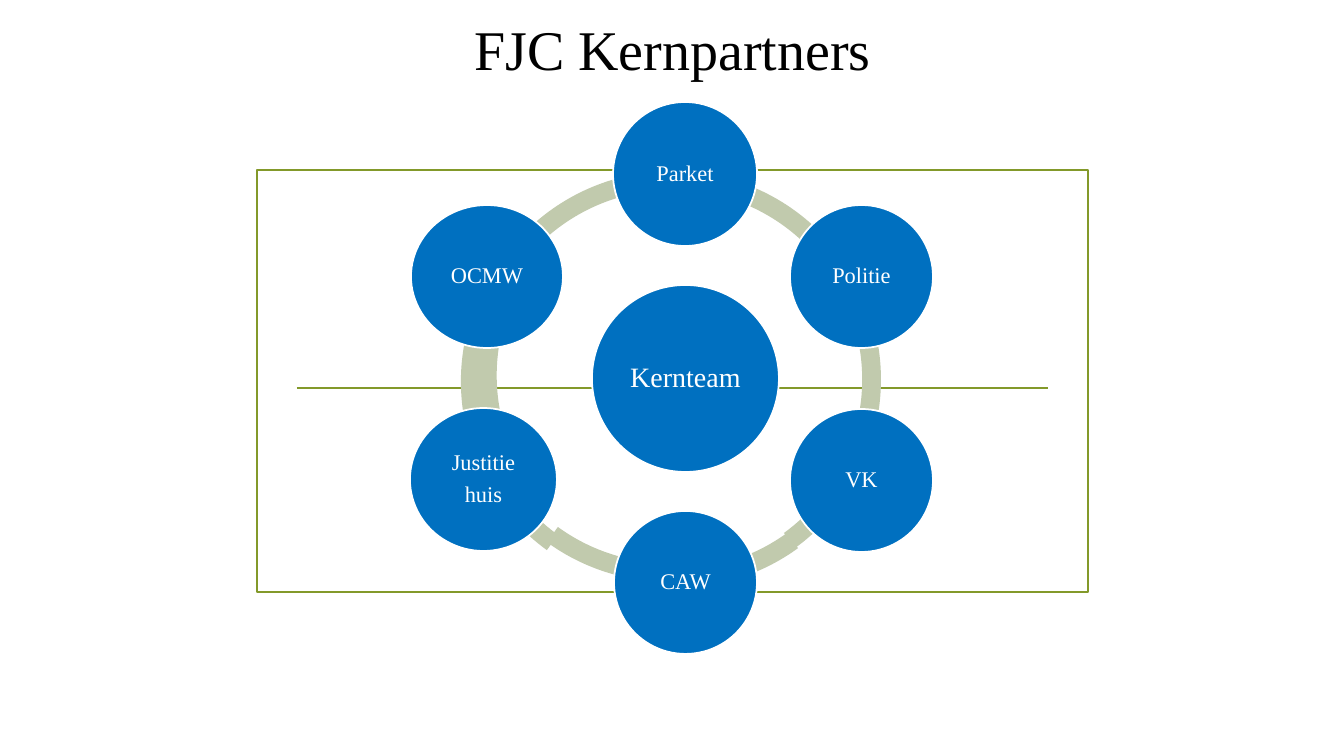
import pptx
import pptx.util
import pptx.dml.color
import pptx.enum.shapes
import pptx.enum.text
import pptx.oxml

SHAPE = pptx.enum.shapes.MSO_SHAPE
ANCHOR = pptx.enum.text.MSO_ANCHOR
FONT = "Times New Roman"
OLIVE, SAGE, BLUE, WHITE, BLACK = "83992A", "C1CAAD", "0070C0", "FFFFFF", "000000"
RING_SIZE = 417
RING_THICKNESS = 0.045

# left, top, start angle, end angle of each ring segment
RING_SEGMENTS = [
    (467, 171, 54, 90),
    (464, 171, 18, 54),
    (464, 171, 198, 18),
    (464, 171, 162, 198),
    (461, 173, 126, 198),
    (461, 165, 90, 126),
    (478, 167, 162, 198),
]

# lines of text, left, top, width, height, text size
PARTNERS = [
    (["Kernteam"], 592, 285, 187, 187, 20),
    (["Parket"], 613, 102, 144, 144, 16),
    (["Politie"], 790, 205, 143, 143, 16),
    (["VK"], 790, 409, 143, 143, 16),
    (["CAW"], 614, 511, 143, 143, 16),
    (["Justitie", "huis"], 410, 408, 147, 143, 16),
    (["OCMW"], 411, 205, 152, 143, 16),
]


def px(length):
    return pptx.util.Emu(round(length * 914400 / 100.8))


def color(value):
    return pptx.dml.color.RGBColor.from_string(value)


def write(shape, lines, size, ink, anchor, inset, line_spacing=1.0, space_after=0):
    frame = shape.text_frame
    frame.word_wrap = True
    frame.auto_size = pptx.enum.text.MSO_AUTO_SIZE.NONE
    frame.vertical_anchor = anchor
    frame.margin_left = frame.margin_right = px(inset)
    frame.margin_top = frame.margin_bottom = px(inset)
    frame.text = "\n".join(lines)
    for paragraph in frame.paragraphs:
        paragraph.alignment = pptx.enum.text.PP_ALIGN.CENTER
        paragraph.line_spacing = line_spacing
        paragraph.space_before = pptx.util.Pt(0)
        paragraph.space_after = pptx.util.Pt(space_after)
        paragraph.font.name = FONT
        paragraph.font.size = pptx.util.Pt(size)
        paragraph.font.color.rgb = color(ink)


def stroke(line, value):
    line.color.rgb = color(value)
    line.width = pptx.util.Pt(1.25)


def add_preset(slide, kind, left, top, width, height, fill=None, outline=None):
    shape = slide.shapes.add_shape(kind, px(left), px(top), px(width), px(height))
    shape.shadow.inherit = False
    if fill:
        shape.fill.solid()
        shape.fill.fore_color.rgb = color(fill)
    else:
        shape.fill.background()
    if outline:
        stroke(shape.line, outline)
    else:
        shape.line.fill.background()
    return shape


def add_rule(slide, left, right, y):
    rule = slide.shapes.add_connector(
        pptx.enum.shapes.MSO_CONNECTOR.STRAIGHT, px(left), px(y), px(right), px(y))
    stroke(rule.line, OLIVE)
    rule._element.spPr.append(pptx.oxml.parse_xml(
        '<a:effectLst xmlns:a="http://schemas.openxmlformats.org/drawingml/2006/main"/>'))


def add_segment(slide, left, top, start, end):
    segment = add_preset(slide, SHAPE.BLOCK_ARC, left, top, RING_SIZE, RING_SIZE, fill=SAGE)
    # Angles are stored in 60000ths of a degree, adjustments in 100000ths
    segment.adjustments[0] = start * 0.6
    segment.adjustments[1] = end * 0.6
    segment.adjustments[2] = RING_THICKNESS


def add_partner(slide, lines, left, top, width, height, size):
    partner = add_preset(slide, SHAPE.OVAL, left, top, width, height, BLUE, WHITE)
    write(partner, lines, size=size, ink=WHITE, anchor=ANCHOR.MIDDLE, inset=2,
          line_spacing=0.9, space_after=0.35 * size)


def set_title(slide, text):
    title = slide.shapes.title
    title.left, title.top, title.width, title.height = px(352), px(10), px(641), px(78)
    write(title, [text], size=40, ink=BLACK, anchor=ANCHOR.TOP, inset=5)


def main():
    deck = pptx.Presentation()
    deck.slide_width, deck.slide_height = px(1344), px(756)
    slide = deck.slides.add_slide(deck.slide_layouts[5])
    set_title(slide, "FJC Kernpartners")

    # Frame and middle rule
    add_preset(slide, SHAPE.RECTANGLE, 257, 170, 831, 422, outline=OLIVE)
    add_rule(slide, 297, 1048, 388)

    # Ring with the partners on it
    for segment in RING_SEGMENTS:
        add_segment(slide, *segment)
    for partner in PARTNERS:
        add_partner(slide, *partner)

    deck.save("out.pptx")


if __name__ == "__main__":
    main()
